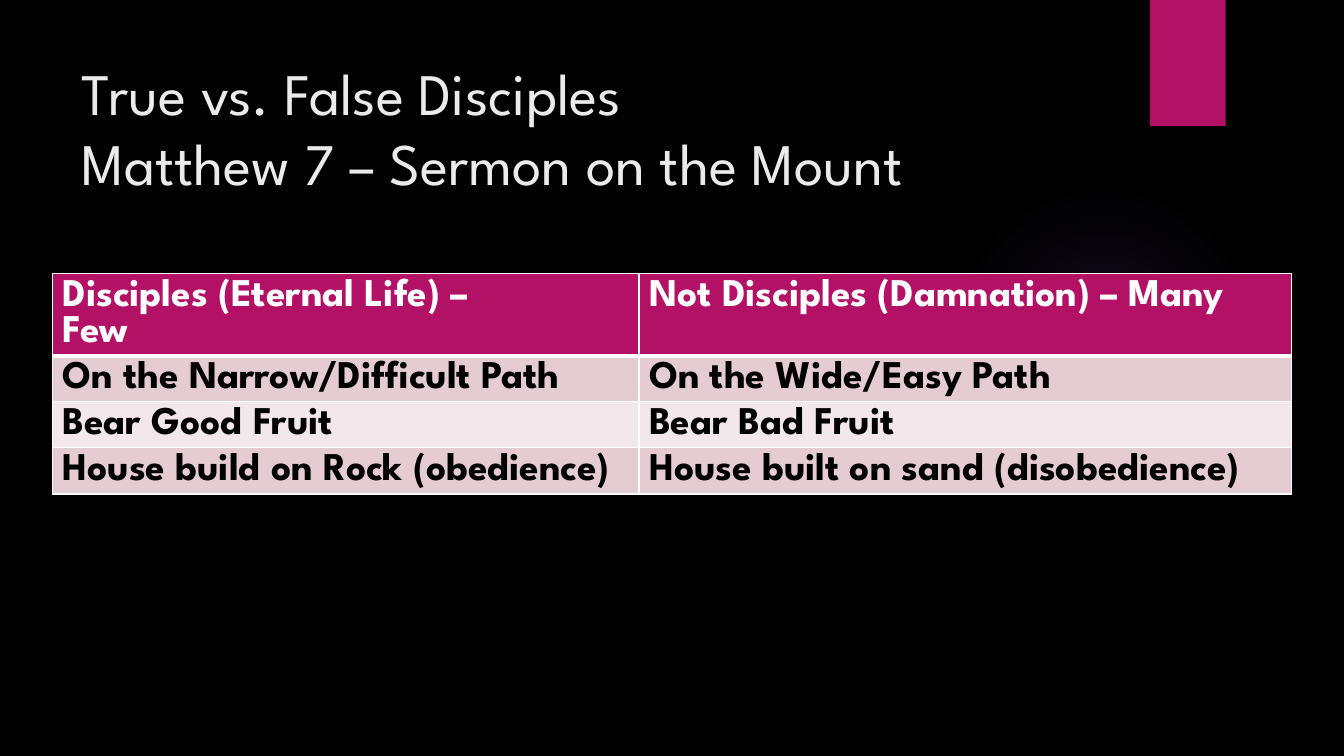
import lxml.etree
import pptx
import pptx.dml.color
import pptx.enum.shapes
import pptx.enum.text
import pptx.oxml.ns
import pptx.util

Pt = pptx.util.Pt
qn = pptx.oxml.ns.qn
RGB = pptx.dml.color.RGBColor.from_string


class Theme:
    font = "League Spartan"
    title_size = 42
    cell_size = 28
    background = "000000"
    title = "EBEBEB"
    accent = "B31166"
    glow = "9B6BF2"
    border = "FFFFFF"
    header_text = "FFFFFF"
    cell_text = "000000"
    bands = ("F2E7EA", "E5CCD3")


def style_runs(frame, size, color, bold):
    for paragraph in frame.paragraphs:
        for run in paragraph.runs:
            run.font.name = Theme.font
            run.font.size = Pt(size)
            run.font.bold = bold
            run.font.color.rgb = RGB(color)


def add_solid(parent, color):
    solid = lxml.etree.SubElement(parent, qn("a:solidFill"))
    return lxml.etree.SubElement(solid, qn("a:srgbClr"), val=color)


deck = pptx.Presentation()
deck.slide_width, deck.slide_height = Pt(960), Pt(540)
slide = deck.slides.add_slide(deck.slide_layouts[5])
slide.background.fill.solid()
slide.background.fill.fore_color.rgb = RGB(Theme.background)

glow = slide.shapes.add_shape(
    pptx.enum.shapes.MSO_SHAPE.OVAL, Pt(677.5), Pt(131.8), Pt(221.8), Pt(221.8))
glow.shadow.inherit = False
glow.line.fill.background()
gradient = lxml.etree.Element(qn("a:gradFill"), rotWithShape="1")
stops = lxml.etree.SubElement(gradient, qn("a:gsLst"))
for position, opacity in ((0, 7), (36, 6), (69, 0)):
    stop = lxml.etree.SubElement(stops, qn("a:gs"), pos=str(position * 1000))
    color = lxml.etree.SubElement(stop, qn("a:srgbClr"), val=Theme.glow)
    lxml.etree.SubElement(color, qn("a:alpha"), val=str(opacity * 1000))
circle = lxml.etree.SubElement(gradient, qn("a:path"), path="circle")
lxml.etree.SubElement(
    circle, qn("a:fillToRect"), l="50000", t="50000", r="50000", b="50000")
glow.element.spPr.find(qn("a:prstGeom")).addnext(gradient)

ribbon = slide.shapes.add_shape(
    pptx.enum.shapes.MSO_SHAPE.RECTANGLE, Pt(821.5), 0, Pt(54), Pt(90))
ribbon.shadow.inherit = False
ribbon.fill.solid()
ribbon.fill.fore_color.rgb = RGB(Theme.accent)
ribbon.line.fill.background()

title = slide.shapes.title
title.left, title.top, title.width, title.height = Pt(51), Pt(36), Pt(741), Pt(110)
title.text_frame.text = "True vs. False Disciples\vMatthew 7 – Sermon on the Mount"
title.text_frame.word_wrap = True
title.text_frame.auto_size = pptx.enum.text.MSO_AUTO_SIZE.NONE
title.text_frame.vertical_anchor = pptx.enum.text.MSO_ANCHOR.MIDDLE
title.text_frame.paragraphs[0].alignment = pptx.enum.text.PP_ALIGN.LEFT
title.text_frame.paragraphs[0].line_spacing = Pt(50)
style_runs(title.text_frame, Theme.title_size, Theme.title, False)

contrasts = (
    ("Disciples (Eternal Life) –\nFew", "Not Disciples (Damnation) – Many"),
    ("On the Narrow/Difficult Path", "On the Wide/Easy Path"),
    ("Bear Good Fruit", "Bear Bad Fruit"),
    ("House build on Rock (obedience)", "House built on sand (disobedience)"),
)
row_height = 29.5
comparison = slide.shapes.add_table(
    len(contrasts), 2, Pt(37.5), Pt(195.5), Pt(885), Pt(row_height * len(contrasts))).table
comparison.columns[0].width = Pt(419)
comparison.columns[1].width = Pt(466)

for row, contrast in enumerate(contrasts):
    comparison.rows[row].height = Pt(row_height)
    header = row == 0
    widths = {"L": 1, "R": 1, "T": 3 if row == 1 else 1, "B": 3 if header else 1}
    for column, wording in enumerate(contrast):
        cell = comparison.cell(row, column)
        cell.text_frame.text = wording
        style_runs(cell.text_frame, Theme.cell_size,
                   Theme.header_text if header else Theme.cell_text, True)
        properties = cell._tc.get_or_add_tcPr()
        for side, width in widths.items():
            edge = lxml.etree.SubElement(properties, qn("a:ln" + side), w=str(Pt(width)))
            add_solid(edge, Theme.border)
        cell.fill.solid()
        cell.fill.fore_color.rgb = RGB(Theme.accent if header else Theme.bands[row % 2])

deck.save("out.pptx")
